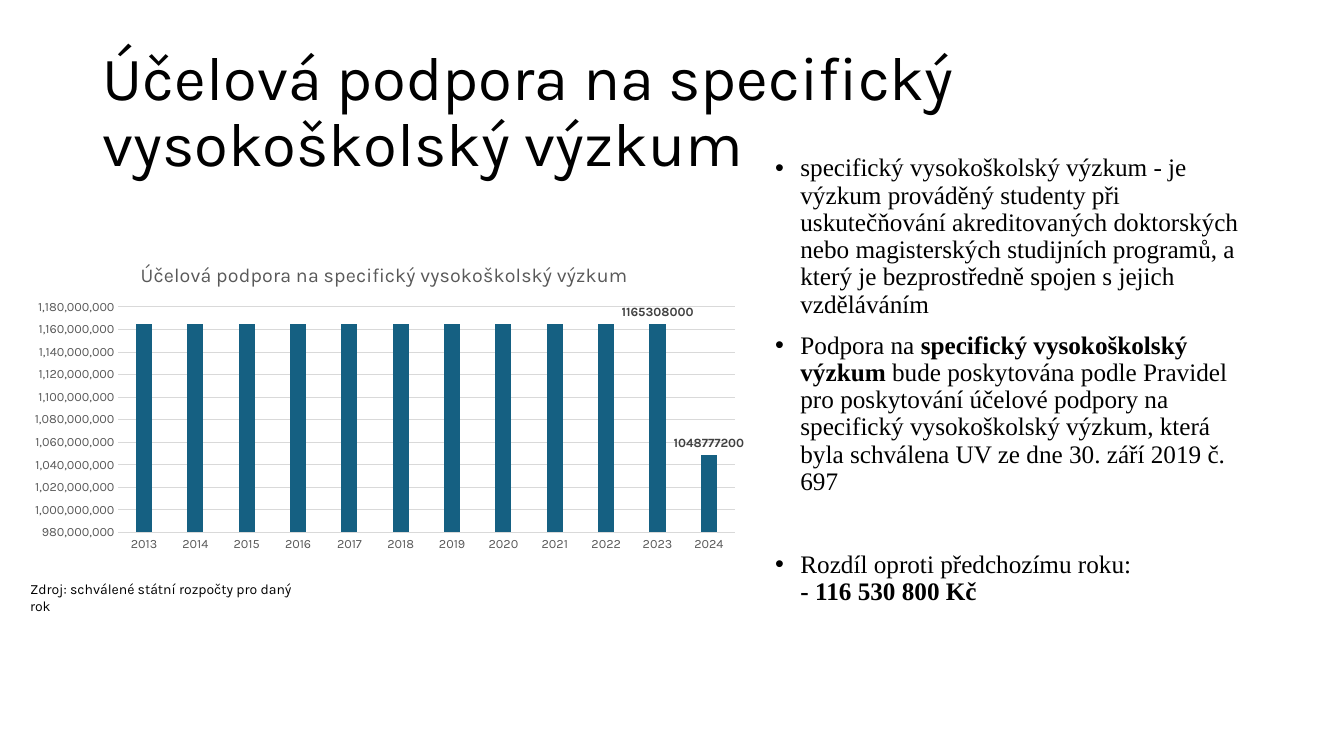
from lxml import etree
from pptx import Presentation
from pptx.chart.data import CategoryChartData
from pptx.dml.color import RGBColor
from pptx.enum.chart import XL_CHART_TYPE, XL_LABEL_POSITION, XL_TICK_MARK
from pptx.enum.text import MSO_ANCHOR
from pptx.oxml.ns import qn
from pptx.util import Inches, Pt

COLUMNS = XL_CHART_TYPE.COLUMN_CLUSTERED
OUTSIDE_END = XL_LABEL_POSITION.OUTSIDE_END
NO_TICK = XL_TICK_MARK.NONE
MIDDLE = MSO_ANCHOR.MIDDLE

COLORS = {"text": "000000", "muted": "595959", "label": "404040",
          "grid": "D9D9D9", "bar": "156082"}
SANS, SERIF = "Karla", "Times New Roman"

HEADING = "Účelová podpora na specifický vysokoškolský výzkum"
SOURCE = "Zdroj: schválené státní rozpočty pro daný rok"
SUPPORT = {str(year): 1165308000 for year in range(2013, 2024)} | {"2024": 1048777200}
LABELLED_YEARS = ("2023", "2024")
POINTS = [
    (10, [("specifický vysokoškolský výzkum - je výzkum prováděný studenty při "
           "uskutečňování akreditovaných doktorských nebo magisterských studijních "
           "programů, a který je bezprostředně spojen s jejich vzděláváním", False)]),
    (10, [("Podpora na ", False),
          ("specifický vysokoškolský výzkum ", True),
          ("bude poskytována podle Pravidel pro poskytování účelové podpory na "
           "specifický vysokoškolský výzkum, která byla schválena UV ze dne "
           "30. září 2019 č. 697", False)]),
    (40, [("Rozdíl oproti předchozímu roku: \v", False),
          ("- 116 530 800 Kč", True)]),
]


def rgb(name):
    """Return the named palette colour."""
    return RGBColor.from_string(COLORS[name])


def style(font, size, color="text", face=SANS, bold=False):
    """Set face, size, colour and weight of a font."""
    font.name, font.size, font.bold = face, Pt(size), bold
    font.color.rgb = rgb(color)


def add_frame(slide, box):
    """Add a wrapping text box and return its text frame."""
    frame = slide.shapes.add_textbox(*map(Inches, box)).text_frame
    frame.word_wrap = True
    return frame


def add_heading(slide, box):
    """Place the slide heading, centred vertically in its box."""
    frame = add_frame(slide, box)
    frame.vertical_anchor = MIDDLE
    heading = frame.paragraphs[0]
    heading.text = HEADING
    heading.line_spacing = 0.9
    style(heading.font, 44)


def add_source(slide, box):
    """Place the note on the data source."""
    note = add_frame(slide, box).paragraphs[0]
    note.text = SOURCE
    style(note.font, 10)


def set_bullet(paragraph):
    """Give a paragraph a round bullet with a hanging indent."""
    properties = paragraph._p.get_or_add_pPr()
    properties.set("marL", str(Inches(0.25)))
    properties.set("indent", str(-Inches(0.25)))
    etree.SubElement(properties, qn("a:buFont"), typeface="Arial")
    etree.SubElement(properties, qn("a:buChar"), char="•")


def add_points(slide, box):
    """Place the bulleted explanation."""
    frame = add_frame(slide, box)
    for index, (space_before, pieces) in enumerate(POINTS):
        point = frame.add_paragraph() if index else frame.paragraphs[0]
        point.line_spacing = 0.9
        point.space_before = Pt(space_before)
        set_bullet(point)
        for text, bold in pieces:
            words, *broken = text.split("\v")
            run = point.add_run()
            run.text = words
            style(run.font, 18, face=SERIF, bold=bold)
            if broken:
                point.add_line_break()


def format_axes(chart):
    """Set scale, grid lines and text of both axes."""
    years, amounts = chart.category_axis, chart.value_axis
    for axis in (years, amounts):
        axis.major_tick_mark = axis.minor_tick_mark = NO_TICK
        style(axis.tick_labels.font, 9, "muted")
    amounts.minimum_scale, amounts.maximum_scale = 980000000, 1180000000
    amounts.major_unit = 20000000
    amounts.tick_labels.number_format = "#,##0"
    amounts.tick_labels.number_format_is_linked = False
    amounts.format.line.fill.background()
    for line in (years.format.line, amounts.major_gridlines.format.line):
        line.color.rgb = rgb("grid")
        line.width = Pt(0.75)


def add_support_chart(slide, box):
    """Place the column chart of yearly support."""
    data = CategoryChartData()
    data.categories = list(SUPPORT)
    data.add_series("Series 1", SUPPORT.values())
    chart = slide.shapes.add_chart(COLUMNS, *map(Inches, box), data).chart
    style(chart.font, 10)
    chart.has_legend = False
    chart.has_title = True
    title = chart.chart_title.text_frame.paragraphs[0]
    title.text = HEADING
    style(title.font, 14, "muted")
    format_axes(chart)
    plot = chart.plots[0]
    plot.vary_by_categories = False
    plot.gap_width, plot.overlap = 219, -27
    support = plot.series[0]
    support.format.fill.solid()
    support.format.fill.fore_color.rgb = rgb("bar")
    support.data_labels.show_value = False
    for year in LABELLED_YEARS:
        label = support.points[list(SUPPORT).index(year)].data_label
        style(label.font, 9, "label", bold=True)
        label.position = OUTSIDE_END


def main():
    """Build and save the slide."""
    deck = Presentation()
    deck.slide_width, deck.slide_height = Inches(13.33), Inches(7.5)
    slide = deck.slides.add_slide(deck.slide_layouts[6])
    add_support_chart(slide, (0.2, 2.45, 7.23, 3.08))
    add_heading(slide, (0.92, 0.4, 11.5, 1.45))
    add_points(slide, (7.59, 1.49, 4.82, 5.61))
    add_source(slide, (0.2, 5.71, 2.93, 0.27))
    deck.save("out.pptx")


if __name__ == "__main__":
    main()
